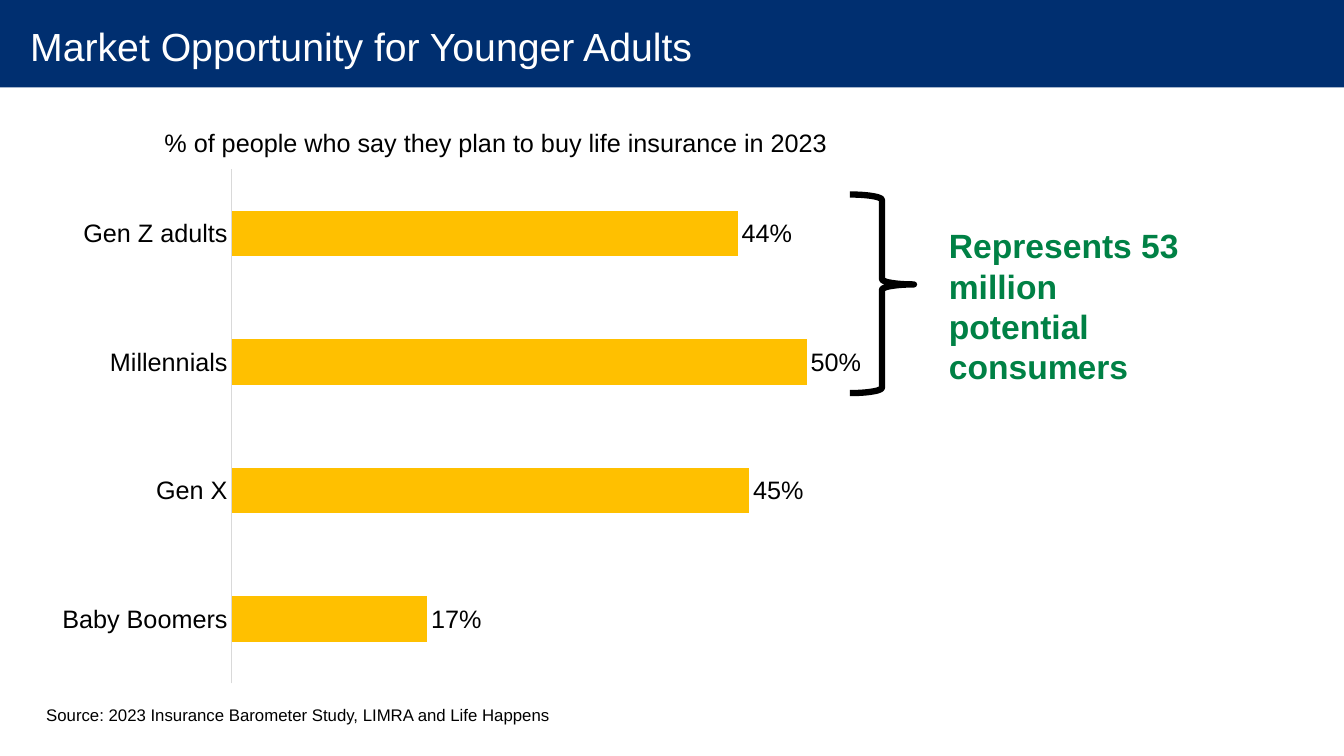
import pptx
import pptx.util
import pptx.dml.color
import pptx.chart.data
import pptx.enum.chart
import pptx.enum.shapes
import pptx.enum.text
import pptx.oxml
import pptx.oxml.ns
from dataclasses import dataclass

Pt = pptx.util.Pt
Inches = pptx.util.Inches
WIDTH, HEIGHT = Inches(13.33), Inches(7.5)


@dataclass(frozen=True)
class Theme:
    font: str = "Arial"
    navy: str = "002F70"
    white: str = "FFFFFF"
    black: str = "000000"
    gold: str = "FFC000"
    green: str = "008145"
    grey: str = "D9D9D9"
    title: int = 28
    callout: int = 24
    chart: int = 18
    source: int = 12


THEME = Theme()


def rgb(color):
    return pptx.dml.color.RGBColor.from_string(color)


def share(box, left, top, width, height):
    x, y, w, h = box
    return [int(v) for v in (x + left * w, y + top * h, width * w, height * h)]


def style(font, size, color, bold=False):
    font.name, font.size, font.bold = THEME.font, Pt(size), bold
    font.color.rgb = rgb(color)


def write(sp, text, size, color, bold=False, wrap=True):
    tf = sp.text_frame
    tf.text = text
    tf.word_wrap = wrap
    p = tf.paragraphs[0]
    p.alignment = pptx.enum.text.PP_ALIGN.LEFT
    style(p.runs[0].font, size, color, bold)
    return tf


def set_layout(parent, index, **values):
    for old in parent.findall(pptx.oxml.ns.qn("c:layout")):
        parent.remove(old)
    inner = '<c:layoutTarget val="inner"/>' if "w" in values else ""
    modes = "".join(f'<c:{k}Mode val="edge"/>' for k in values if k in "xy")
    sizes = "".join(f'<c:{k} val="{v}"/>' for k, v in values.items())
    xml = (f'<c:layout {pptx.oxml.ns.nsdecls("c")}><c:manualLayout>'
           f'{inner}{modes}{sizes}</c:manualLayout></c:layout>')
    parent.insert(index, pptx.oxml.parse_xml(xml))


def add_header(s, box, text):
    title = s.shapes.title
    banner = s.shapes.add_shape(
        pptx.enum.shapes.MSO_SHAPE.RECTANGLE, *share(box, 0, 0, 1, 0.89))
    banner.shadow.inherit = False
    banner.fill.solid()
    banner.fill.fore_color.rgb = rgb(THEME.navy)
    banner.line.fill.background()
    title.element.addprevious(banner.element)
    title.left, title.top, title.width, title.height = box
    tf = write(title, text, THEME.title, THEME.white, wrap=False)
    tf.auto_size = pptx.enum.text.MSO_AUTO_SIZE.NONE
    tf.vertical_anchor = pptx.enum.text.MSO_ANCHOR.MIDDLE
    tf.margin_left, tf.margin_right = Inches(0.3), Inches(0.2)
    tf.margin_top = tf.margin_bottom = 0
    tf.paragraphs[0].line_spacing = 0.9


def add_plans_chart(s, box, title, plans):
    data = pptx.chart.data.CategoryChartData(number_format="0%")
    data.categories = list(plans)
    data.add_series("Series 1", list(plans.values()))
    chart = s.shapes.add_chart(
        pptx.enum.chart.XL_CHART_TYPE.BAR_CLUSTERED, *box, data).chart
    style(chart.font, THEME.chart, THEME.black)
    chart.has_legend = False
    chart.has_title = True
    tf = chart.chart_title.text_frame
    tf.text = title
    style(tf.paragraphs[0].runs[0].font, THEME.chart, THEME.black)
    set_layout(chart.chart_title._element, 1, x=0.13, y=0.04)

    axis = chart.category_axis
    axis.major_tick_mark = pptx.enum.chart.XL_TICK_MARK.NONE
    axis.format.line.color.rgb = rgb(THEME.grey)
    axis.format.line.width = Pt(0.75)
    style(axis.tick_labels.font, THEME.chart, THEME.black)
    values = chart.value_axis
    values.minimum_scale, values.maximum_scale = 0, 0.6
    values.has_major_gridlines = False
    values.visible = False

    plot = chart.plots[0]
    plot.gap_width = 182
    plot.vary_by_categories = False
    fill = plot.series[0].format.fill
    fill.solid()
    fill.fore_color.rgb = rgb(THEME.gold)
    plot.has_data_labels = True
    labels = plot.data_labels
    labels.show_value = True
    labels.number_format, labels.number_format_is_linked = "0%", False
    labels.position = pptx.enum.chart.XL_LABEL_POSITION.OUTSIDE_END
    style(labels.font, THEME.chart, THEME.black)
    plot_area = chart.element.find(".//" + pptx.oxml.ns.qn("c:plotArea"))
    set_layout(plot_area, 0, x=0.21, y=0.12, w=0.77, h=0.86)


def add_callout(s, box, text):
    brace = s.shapes.add_shape(
        pptx.enum.shapes.MSO_SHAPE.RIGHT_BRACE, *share(box, 0, 0, 0.18, 1))
    brace.shadow.inherit = False
    brace.adjustments[0], brace.adjustments[1] = 0.083, 0.453
    brace.fill.background()
    brace.line.color.rgb = rgb(THEME.black)
    brace.line.width = Pt(4.5)
    sp = s.shapes.add_textbox(*share(box, 0.25, 0.13, 0.75, 0.87))
    write(sp, text, THEME.callout, THEME.green, bold=True)


def add_source(s, box, text):
    write(s.shapes.add_textbox(*box), text, THEME.source, THEME.black, wrap=False)


def main():
    prs = pptx.Presentation()
    prs.slide_width, prs.slide_height = WIDTH, HEIGHT
    s = prs.slides.add_slide(prs.slide_layouts[5])
    page = (0, 0, WIDTH, HEIGHT)
    add_header(s, share(page, 0, 0, 1, 0.13),
               "Market Opportunity for Younger Adults")
    add_plans_chart(
        s, [Inches(v) for v in (0.43, 0.97, 8.89, 5.93)],
        "% of people who say they plan to buy life insurance in 2023",
        {"Baby Boomers": 0.17, "Gen X": 0.45,
         "Millennials": 0.5, "Gen Z adults": 0.44})
    add_callout(s, [Inches(v) for v in (8.43, 1.93, 3.53, 1.97)],
                "Represents 53 million potential consumers")
    add_source(s, [Inches(v) for v in (0.36, 6.94, 5.24, 0.3)],
               "Source: 2023 Insurance Barometer Study, LIMRA and Life Happens")
    prs.save("out.pptx")


if __name__ == "__main__":
    main()
